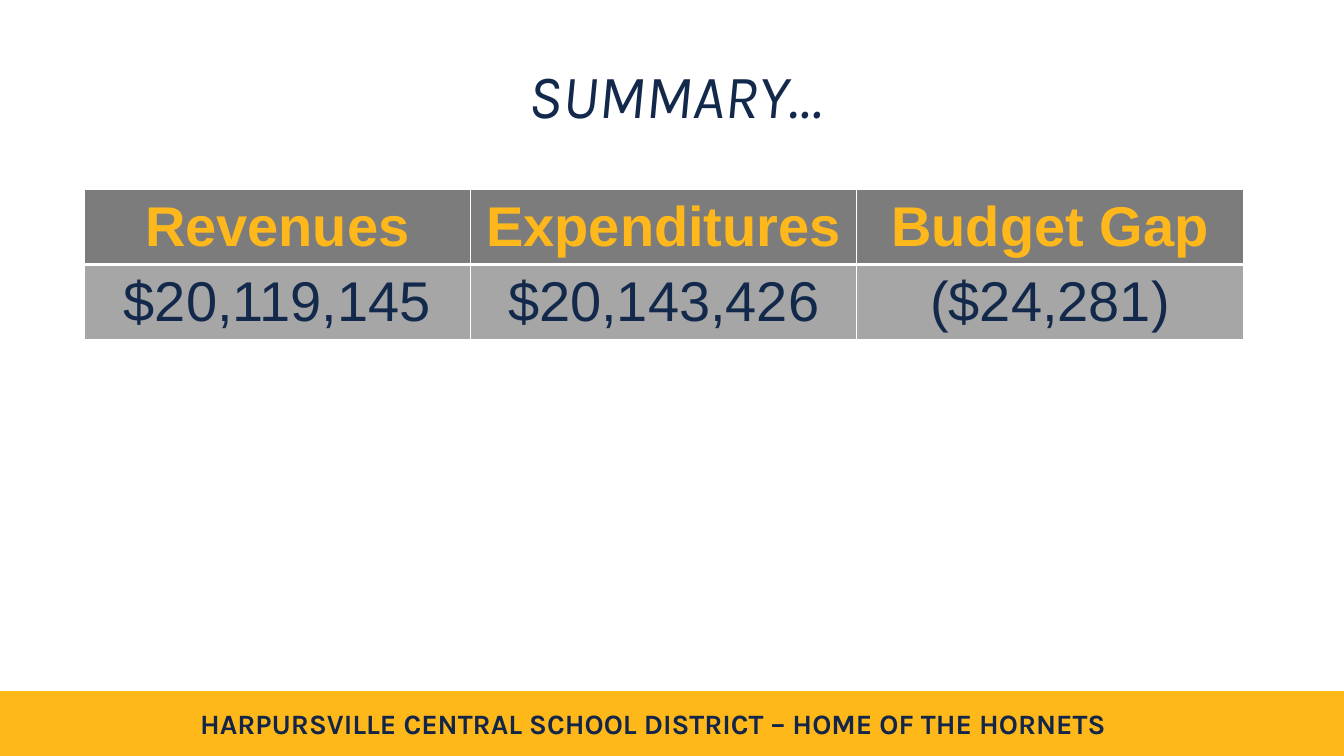
from lxml import etree
from pptx import Presentation
from pptx.dml.color import RGBColor
from pptx.enum.shapes import MSO_SHAPE
from pptx.enum.text import MSO_ANCHOR, PP_ALIGN
from pptx.oxml.ns import qn
from pptx.util import Pt

CENTER = PP_ALIGN.CENTER
MIDDLE = MSO_ANCHOR.MIDDLE
RECTANGLE = MSO_SHAPE.RECTANGLE
COLORS = {
    "white": "FFFFFF",
    "band": "FFB819",
    "footer": "132649",
    "navy": "13294B",
    "gold": "FFB81C",
    "header": "7C7C7C",
    "body": "A6A6A6",
}


def write_centered(frame, text, font_name, size, color, bold=False, italic=False):
    frame.text = text
    para = frame.paragraphs[0]
    para.alignment = CENTER
    font = para.runs[0].font
    font.name, font.size = font_name, Pt(size)
    font.bold, font.italic = bold, italic
    font.color.rgb = RGBColor.from_string(COLORS[color])


def add_cell_border(cell, side, width):
    properties = cell._tc.get_or_add_tcPr()
    line = etree.SubElement(properties, qn(f"a:ln{side}"), w=str(Pt(width)))
    fill = etree.SubElement(line, qn("a:solidFill"))
    etree.SubElement(fill, qn("a:srgbClr"), val=COLORS["white"])


deck = Presentation()
deck.slide_width, deck.slide_height = Pt(960), Pt(540)
page = deck.slides.add_slide(deck.slide_layouts[5])

# Footer band
band = page.shapes.add_shape(RECTANGLE, Pt(0), Pt(494), Pt(960), Pt(45.5))
band.shadow.inherit = False
band.fill.solid()
band.fill.fore_color.rgb = RGBColor.from_string(COLORS["band"])
band.line.color.rgb = RGBColor.from_string(COLORS["band"])
band.line.width = Pt(1)

footer = page.shapes.add_textbox(Pt(126.5), Pt(501), Pt(680), Pt(31.5))
footer.text_frame.word_wrap = True
write_centered(footer.text_frame,
               "HARPURSVILLE CENTRAL SCHOOL DISTRICT – HOME OF THE HORNETS",
               "Karla", 20, "footer", bold=True)

# Title
title = page.shapes.title
title.left, title.top, title.width, title.height = Pt(68.5), Pt(33), Pt(828), Pt(75)
title.fill.solid()
title.fill.fore_color.rgb = RGBColor.from_string(COLORS["white"])
title.text_frame.vertical_anchor = MIDDLE
write_centered(title.text_frame, "SUMMARY…", "Karla", 44, "navy", italic=True)
title.text_frame.paragraphs[0].line_spacing = 0.9

# Budget table
budget_rows = [
    ["Revenues", "Expenditures", "Budget Gap"],
    ["$20,119,145", "$20,143,426", "($24,281)"],
]
row_height = 51.4
table = page.shapes.add_table(2, 3, Pt(60), Pt(135.5), Pt(828), Pt(2 * row_height)).table
for row_index, values in enumerate(budget_rows):
    is_header = row_index == 0
    table.rows[row_index].height = Pt(row_height)
    for column_index, value in enumerate(values):
        cell = table.cell(row_index, column_index)
        cell.vertical_anchor = MIDDLE
        cell.margin_top = cell.margin_bottom = Pt(2.7)
        write_centered(cell.text_frame, value, "Arial", 40,
                       "gold" if is_header else "navy", bold=is_header)
        widths = {"L": 1, "R": 1, "T": 1 if is_header else 3, "B": 3 if is_header else 1}
        for side, width in widths.items():
            add_cell_border(cell, side, width)
        cell.fill.solid()
        cell.fill.fore_color.rgb = RGBColor.from_string(
            COLORS["header" if is_header else "body"])

deck.save("out.pptx")
